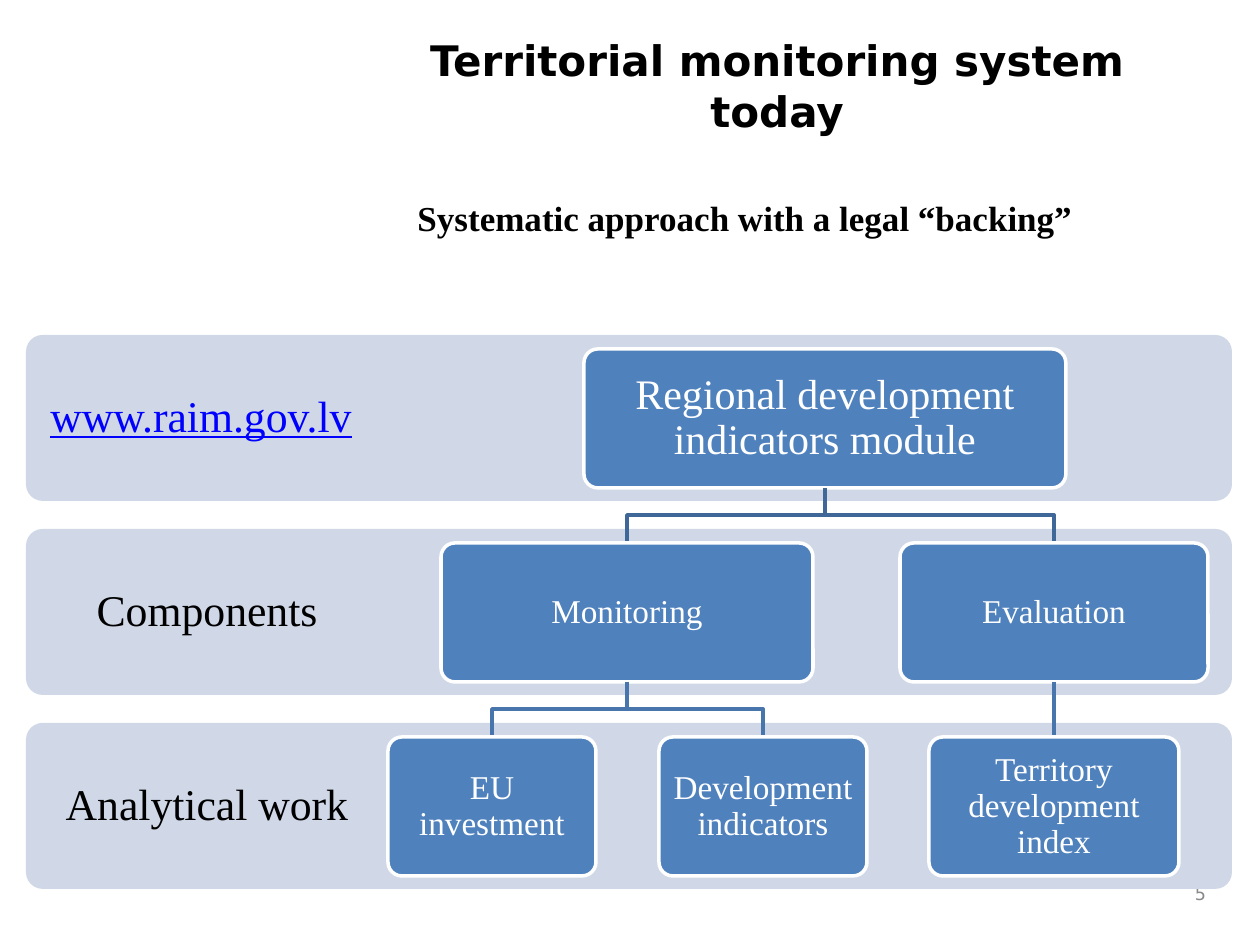
from lxml.etree import SubElement
from pptx import Presentation
from pptx.dml.color import RGBColor
from pptx.enum.shapes import MSO_CONNECTOR, MSO_SHAPE
from pptx.enum.text import MSO_ANCHOR, PP_ALIGN
from pptx.oxml.ns import qn
from pptx.util import Pt

PX = 914400 // 126
COLORS = {
    "black": "000000", "white": "FFFFFF", "number": "898989", "link": "0000FF",
    "band": "D0D8E8", "node": "4F81BD", "upper": "3F6797", "lower": "4875AC",
}
SANS, SERIF = "DejaVu Sans", "Times New Roman"
ROW_TOP, ROW_STEP, ROW_H = 335, 194, 166
NODE_TOP, NODE_H = 349, 139


def rgb(name):
    return RGBColor.from_string(COLORS[name])


def write(sp, text, size, color="black", inset=(12, 6), anchor=MSO_ANCHOR.MIDDLE,
          align=PP_ALIGN.CENTER, spacing=1.0, **font):
    """Fill a shape with one paragraph; inset is (sides, top and bottom) in px."""
    tf = sp.text_frame
    x, y = (v * PX for v in inset)
    frame = {"word_wrap": True, "vertical_anchor": anchor, "margin_left": x,
             "margin_right": x, "margin_top": y, "margin_bottom": y}
    for key, value in frame.items():
        setattr(tf, key, value)
    p = tf.paragraphs[0]
    p.alignment, p.line_spacing = align, spacing
    r = p.add_run()
    r.text = text
    r.font.color.rgb = rgb(color)
    for key, value in {"size": Pt(size), "name": SERIF, **font}.items():
        setattr(r.font, key, value)


prs = Presentation()
prs.slide_width, prs.slide_height = 1260 * PX, 945 * PX
s = prs.slides.add_slide(prs.slide_layouts[6])

# Heading, subtitle and slide number
texts = [
    ((357, 29, 840, 142), "Territorial monitoring system today", 24,
     {"name": SANS, "bold": True, "anchor": MSO_ANCHOR.TOP}),
    ((255, 190, 980, 55), "Systematic approach with a legal “backing”", 20, {"bold": True}),
    ((1176, 872, 42, 42), "5", 10,
     {"name": SANS, "color": "number", "align": PP_ALIGN.RIGHT}),
]
for box, text, size, fmt in texts:
    write(s.shapes.add_textbox(*(v * PX for v in box)), text, size, **fmt)

# Row bands with their labels
rows = [
    ("www.raim.gov.lv", 350, {"color": "link", "underline": True}),
    ("Components", 362, {}),
    ("Analytical work", 362, {}),
]
for i, (label, label_w, fmt) in enumerate(rows):
    top = ROW_TOP + i * ROW_STEP
    sp = s.shapes.add_shape(MSO_SHAPE.ROUNDED_RECTANGLE, 26 * PX, top * PX, 1206 * PX, ROW_H * PX)
    sp.adjustments[0] = 0.1
    sp.shadow.inherit = False
    sp.fill.solid()
    sp.fill.fore_color.rgb = rgb("band")
    sp.line.fill.background()
    tb = s.shapes.add_textbox(26 * PX, top * PX, label_w * PX, ROW_H * PX)
    write(tb, label, 25, inset=(24, 24), spacing=0.9, **fmt)

# Tree: text, row, centre x, width, text size, parent
nodes = [
    ("Regional development indicators module", 0, 825, 482, 24, None),
    ("Monitoring", 1, 627, 372, 19, "Regional development indicators module"),
    ("EU investment", 2, 492, 208, 19, "Monitoring"),
    ("Development indicators", 2, 763, 208, 19, "Monitoring"),
    ("Evaluation", 1, 1054, 308, 19, "Regional development indicators module"),
    ("Territory development index", 2, 1054, 250, 19, "Evaluation"),
]
placed = {}
for text, row, cx, width, size, parent in nodes:
    top = NODE_TOP + row * ROW_STEP
    link = None
    straight = False
    if parent:
        parent_sp, px = placed[parent]
        start = top - ROW_STEP + NODE_H
        straight = px == cx
        if straight:
            link = s.shapes.add_connector(MSO_CONNECTOR.STRAIGHT, px * PX, start * PX, cx * PX, top * PX)
            link.begin_connect(parent_sp, 2)
            SubElement(link._element.spPr, qn("a:effectLst"))
        else:
            mid = (start + top) // 2
            fb = s.shapes.build_freeform(px * PX, start * PX)
            fb.add_line_segments([(px * PX, mid * PX), (cx * PX, mid * PX), (cx * PX, top * PX)], close=False)
            link = fb.convert_to_shape()
            link.fill.background()
            link.shadow.inherit = False
        link.line.color.rgb = rgb("upper" if row == 1 else "lower")
        link.line.width = Pt(2)
    sp = s.shapes.add_shape(MSO_SHAPE.ROUNDED_RECTANGLE, (cx - width // 2) * PX, top * PX,
                            width * PX, NODE_H * PX)
    sp.adjustments[0] = 0.1
    sp.shadow.inherit = False
    sp.fill.solid()
    sp.fill.fore_color.rgb = rgb("node")
    sp.line.color.rgb = rgb("white")
    sp.line.width = Pt(2)
    write(sp, text, size, "white", inset=(9, 9), spacing=0.9)
    if straight:
        link.end_connect(sp, 0)
    placed[text] = sp, cx

prs.save("out.pptx")
